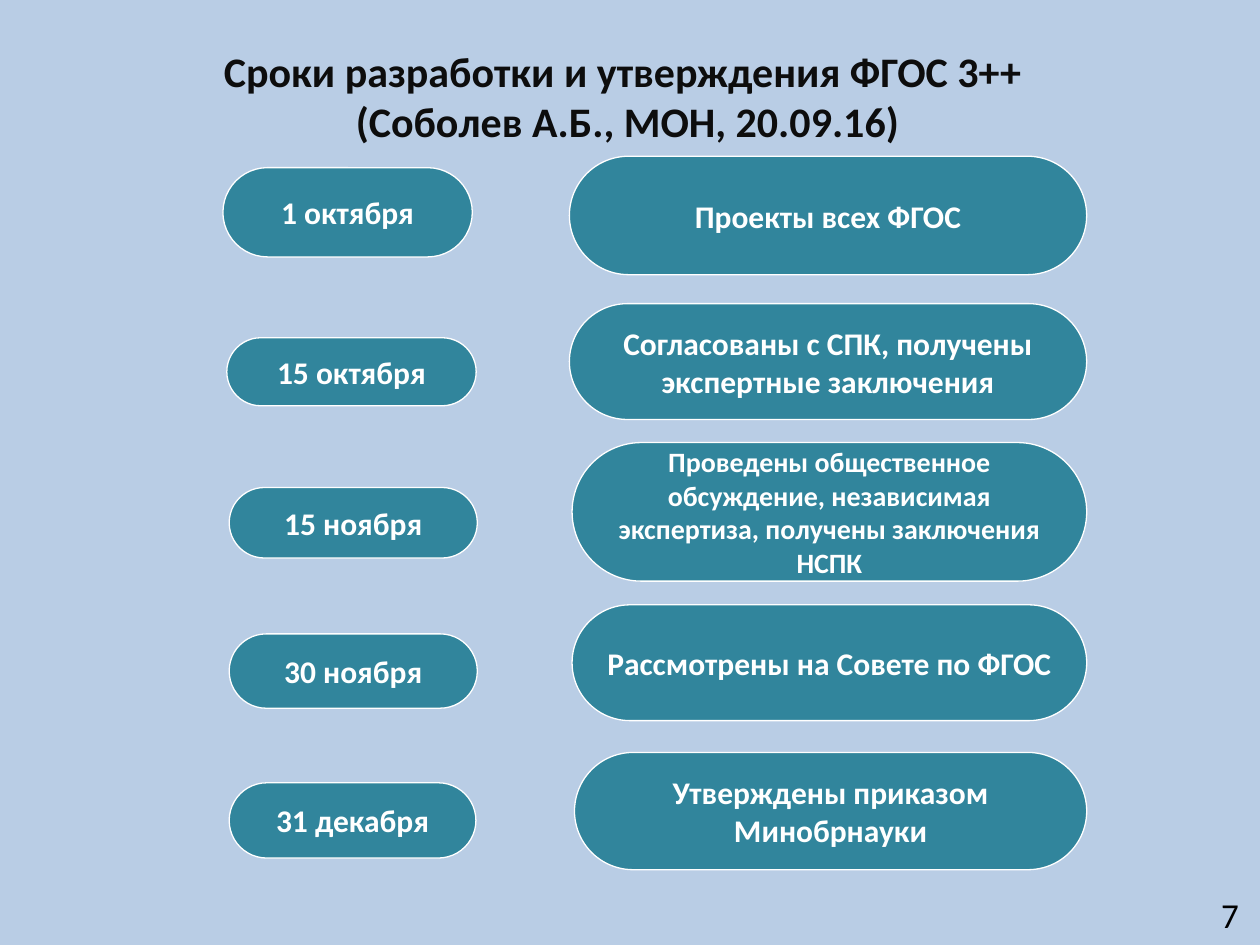
"""Build the slide with the schedule for drafting and approving the standards."""
from pptx import Presentation
from pptx.dml.color import RGBColor
from pptx.enum.shapes import MSO_SHAPE as Shape
from pptx.enum.text import MSO_ANCHOR as Anchor, MSO_AUTO_SIZE as AutoSize, PP_ALIGN as Align
from pptx.util import Pt

COLORS = {"background": "B9CDE5", "pill": "31859C", "white": "FFFFFF",
          "title": "0D0D0D", "number": "000000"}
RIGHT_EDGE = 621

STAGES = [
    (("1 октября", 127.4, 95.8, 142.5, 51),
     ("Проекты всех ФГОС", 325.4, 89.3, 67.7, 18)),
    (("15 октября", 129.6, 193, 142.5, 38.9),
     ("Согласованы с СПК, получены экспертные заключения", 325.4, 173.5, 66.2, 18)),
    (("15 ноября", 131, 278.6, 141.8, 40.3),
     ("Проведены общественное обсуждение, независимая экспертиза, "
      "получены заключения НСПК", 326.9, 252.9, 79.2, 16)),
    (("30 ноября", 131, 362.2, 141.8, 42.5),
     ("Рассмотрены на Совете по ФГОС", 326.9, 345.6, 66.2, 18)),
    (("31 декабря", 131, 447.3, 141, 43),
     ("Утверждены приказом Минобрнауки", 328.3, 430, 67, 18)),
]


class ScheduleSlide:
    def __init__(self, deck):
        self.font = "Calibri"
        self.slide = deck.slides.add_slide(deck.slide_layouts[5])
        self.paint(self.slide.background.fill, "background")

    def paint(self, fill, color):
        fill.solid()
        fill.fore_color.rgb = RGBColor.from_string(COLORS[color])

    def set_text(self, frame, text, size, color, align, bold):
        frame.word_wrap = True
        frame.text = text
        for paragraph in frame.paragraphs:
            paragraph.alignment = align
            font = paragraph.font
            font.name, font.size, font.bold = self.font, Pt(size), bold
            font.color.rgb = RGBColor.from_string(COLORS[color])

    def title(self, text, left, top, width, height):
        heading = self.slide.shapes.title
        heading.left, heading.top = Pt(left), Pt(top)
        heading.width, heading.height = Pt(width), Pt(height)
        frame = heading.text_frame
        self.set_text(frame, text, 24, "title", Align.CENTER, True)
        frame.vertical_anchor = Anchor.TOP
        frame.auto_size = AutoSize.SHAPE_TO_FIT_TEXT

    def pill(self, text, left, top, width, height, size=18):
        pill = self.slide.shapes.add_shape(
            Shape.ROUNDED_RECTANGLE, Pt(left), Pt(top), Pt(width), Pt(height))
        pill.adjustments[0] = 0.5
        pill.shadow.inherit = False
        self.paint(pill.fill, "pill")
        self.paint(pill.line.fill, "white")
        pill.line.width = Pt(0.75)
        frame = pill.text_frame
        frame.margin_left = frame.margin_right = Pt(3)
        frame.margin_top = frame.margin_bottom = Pt(1.5)
        frame.vertical_anchor = Anchor.MIDDLE
        self.set_text(frame, text, size, "white", Align.CENTER, True)

    def number(self, text, left, top, width, height):
        number = self.slide.shapes.add_textbox(Pt(left), Pt(top), Pt(width), Pt(height))
        number.text_frame.vertical_anchor = Anchor.MIDDLE
        self.set_text(number.text_frame, text, 20, "number", Align.RIGHT, False)


def main():
    deck = Presentation()
    deck.slide_width, deck.slide_height = Pt(720), Pt(540)
    schedule = ScheduleSlide(deck)
    schedule.title("Сроки разработки и утверждения ФГОС 3++ \n(Соболев А.Б., МОН, 20.09.16)",
                   36.7, 22.3, 643.7, 65.5)
    for deadline, (result, left, top, height, size) in STAGES:
        schedule.pill(*deadline)
        schedule.pill(result, left, top, RIGHT_EDGE - left, height, size)
    schedule.number("7", 547.2, 508.3, 167.8, 28.8)
    deck.save("out.pptx")


if __name__ == "__main__":
    main()
